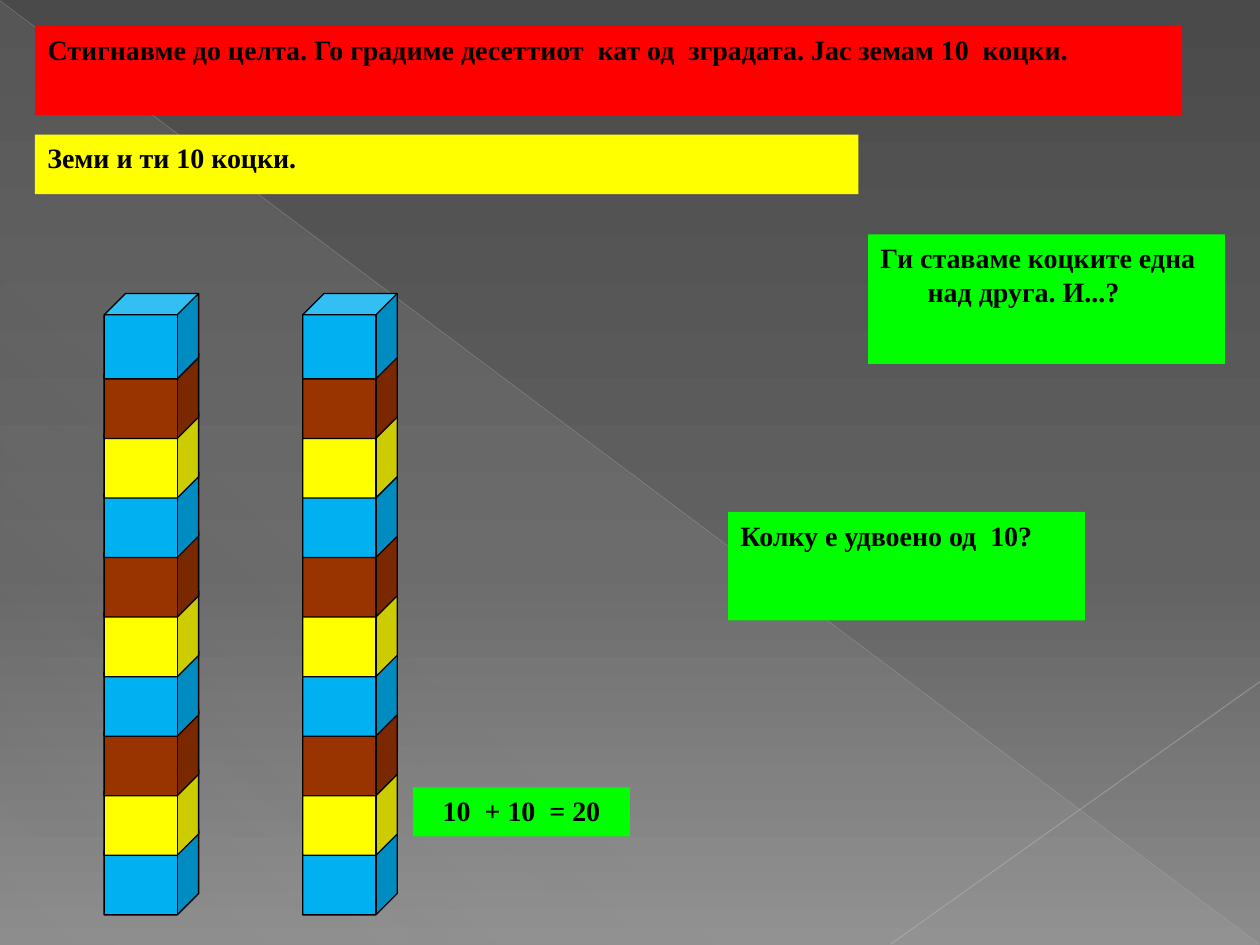
from lxml.etree import SubElement
from pptx import Presentation
from pptx.dml.color import RGBColor
from pptx.enum.shapes import MSO_CONNECTOR, MSO_SHAPE
from pptx.enum.text import MSO_ANCHOR, MSO_AUTO_SIZE, PP_ALIGN
from pptx.oxml.ns import qn
from pptx.util import Pt

BLACK = RGBColor(0x00, 0x00, 0x00)
RED = RGBColor(0xFF, 0x00, 0x00)
YELLOW = RGBColor(0xFF, 0xFF, 0x00)
GREEN = RGBColor(0x00, 0xFF, 0x00)
BLUE = RGBColor(0x00, 0xB0, 0xF0)
BROWN = RGBColor(0x99, 0x33, 0x00)
DARK_GRAY = RGBColor(0x4A, 0x4A, 0x4A)
MID_GRAY = RGBColor(0x62, 0x62, 0x62)
LIGHT_GRAY = RGBColor(0x8C, 0x8C, 0x8C)
PALE_GRAY = RGBColor(0xD2, 0xD2, 0xD2)
LONG_LINE_GRAY = RGBColor(0xBF, 0xBF, 0xBF)
SHORT_LINE_GRAY = RGBColor(0xC6, 0xC6, 0xC6)


def set_gradient(fill, element, angle, stops):
    """Give fill, held by element, stops of (position %, colour, opacity %)."""
    fill.gradient()
    gradient = element.find(".//" + qn("a:gradFill"))
    stop_list = gradient.find(qn("a:gsLst"))
    stop_list.clear()
    for position, color, opacity in stops:
        stop = SubElement(stop_list, qn("a:gs"), pos=str(position * 1000))
        rgb = SubElement(stop, qn("a:srgbClr"), val=str(color))
        SubElement(rgb, qn("a:alpha"), val=str(opacity * 1000))
    linear = gradient.find(qn("a:lin"))
    linear.set("ang", str(angle * 60000))
    linear.set("scaled", "0")


def format_text_box(shape, text, color, alignment=PP_ALIGN.LEFT):
    shape.fill.solid()
    shape.fill.fore_color.rgb = color
    frame = shape.text_frame
    frame.text = text
    frame.word_wrap = True
    frame.auto_size = MSO_AUTO_SIZE.NONE
    frame.vertical_anchor = MSO_ANCHOR.TOP
    paragraph = frame.paragraphs[0]
    paragraph.alignment = alignment
    paragraph.line_spacing = 1.0
    paragraph.space_before = Pt(3.2)
    properties = paragraph._p.get_or_add_pPr()
    properties.set("marL", str(Pt(27)))
    properties.set("indent", str(Pt(-27)))
    paragraph.font.name = "Times New Roman"
    paragraph.font.size = Pt(16)
    paragraph.font.bold = True
    paragraph.font.color.rgb = BLACK


presentation = Presentation()
presentation.slide_width = Pt(720)
presentation.slide_height = Pt(540)
slide = presentation.slides.add_slide(presentation.slide_layouts[5])
shapes = slide.shapes

# Background with a faint triangle and two diagonal lines
set_gradient(slide.background.fill, slide.element, 90,
             [(0, DARK_GRAY, 100), (60, MID_GRAY, 100), (100, LIGHT_GRAY, 100)])
triangle = shapes.add_shape(MSO_SHAPE.RIGHT_TRIANGLE, Pt(0.5), Pt(1), Pt(719), Pt(538.5))
triangle.shadow.inherit = False
triangle.line.fill.background()
set_gradient(triangle.fill, triangle.element, 133,
             [(0, PALE_GRAY, 10), (70, PALE_GRAY, 8), (100, PALE_GRAY, 1)])

for start_x, start_y, end_x, end_y, color, width, opacity in [
    (0, 0.5, 719.5, 539.5, LONG_LINE_GRAY, 0.39, 35),
    (720, 389.5, 509, 539.5, SHORT_LINE_GRAY, 0.47, 45),
]:
    line = shapes.add_connector(MSO_CONNECTOR.STRAIGHT,
                                Pt(start_x), Pt(start_y), Pt(end_x), Pt(end_y))
    line.line.color.rgb = color
    line.line.width = Pt(width)
    rgb = line.element.spPr.find(".//" + qn("a:srgbClr"))
    SubElement(rgb, qn("a:alpha"), val=str(opacity * 1000))
    SubElement(line.element.spPr, qn("a:effectLst"))

# Title, brought in front of the background
title = shapes.title
title.left, title.top, title.width, title.height = Pt(20), Pt(15), Pt(655.5), Pt(51)
format_text_box(
    title,
    "Стигнавме до целта. Го градиме десеттиот  кат од  зградата. Јас земам 10  коцки.",
    RED)
shapes.element.append(title.element)

# Two towers of ten cubes, stacked from the bottom up
CUBE_STEP = 34.03
CUBE_COLORS = [BLUE, YELLOW, BROWN]
for tower_left in (59.5, 173):
    for level in range(10):
        cube = shapes.add_shape(MSO_SHAPE.CUBE, Pt(tower_left), Pt(474 - level * CUBE_STEP),
                                Pt(54), Pt(48.8))
        cube.adjustments[0] = 0.25
        cube.shadow.inherit = False
        cube.fill.solid()
        cube.fill.fore_color.rgb = CUBE_COLORS[level % 3]
        cube.line.color.rgb = BLACK
        cube.line.width = Pt(0.75)

# Instructions, questions and the answer
for text, left, top, width, height, color, alignment in [
    ("Земи и ти 10 коцки.", 20, 77, 470.5, 34, YELLOW, PP_ALIGN.LEFT),
    ("Ги ставаме коцките една над друга. И...?", 496, 134, 204, 74, GREEN, PP_ALIGN.LEFT),
    ("Колку е удвоено од  10?", 416, 292.5, 204, 62, GREEN, PP_ALIGN.LEFT),
    ("10  + 10  = 20", 236, 450, 124, 28, GREEN, PP_ALIGN.CENTER),
]:
    text_box = shapes.add_textbox(Pt(left), Pt(top), Pt(width), Pt(height))
    format_text_box(text_box, text, color, alignment)

presentation.save("out.pptx")
